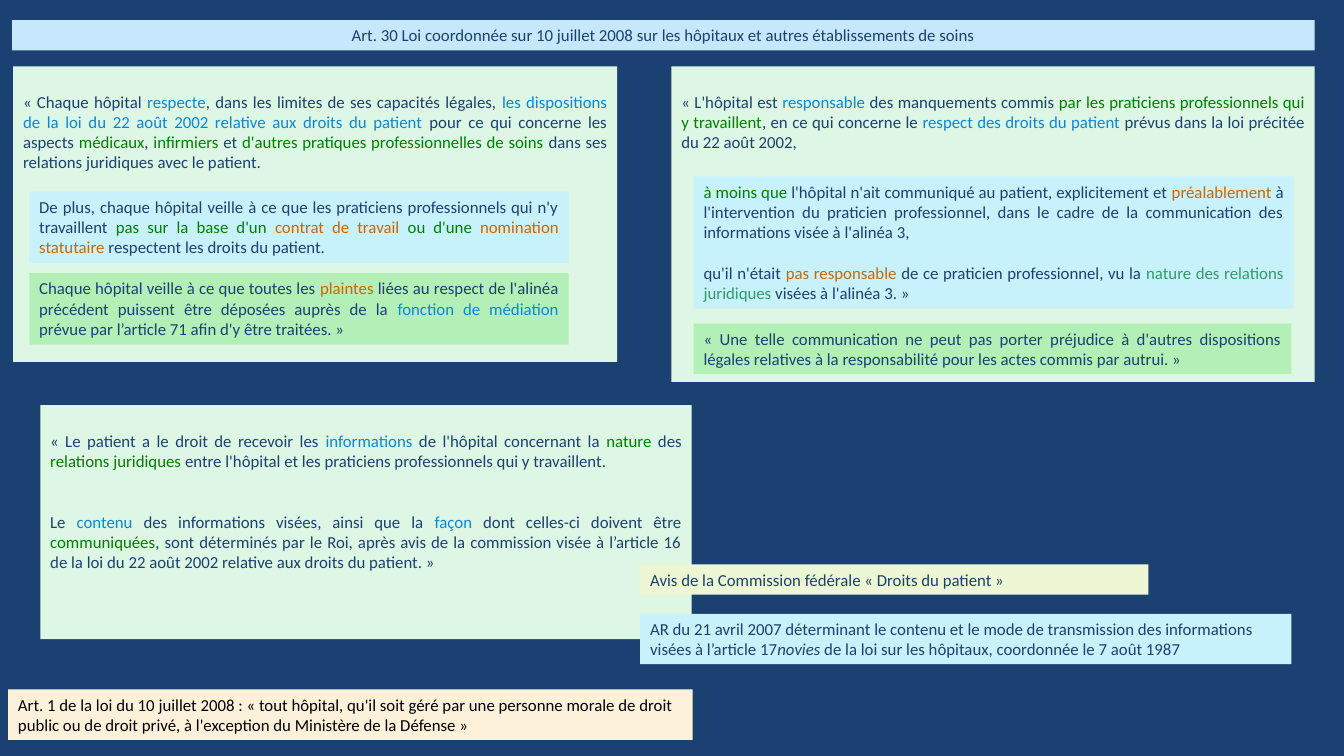
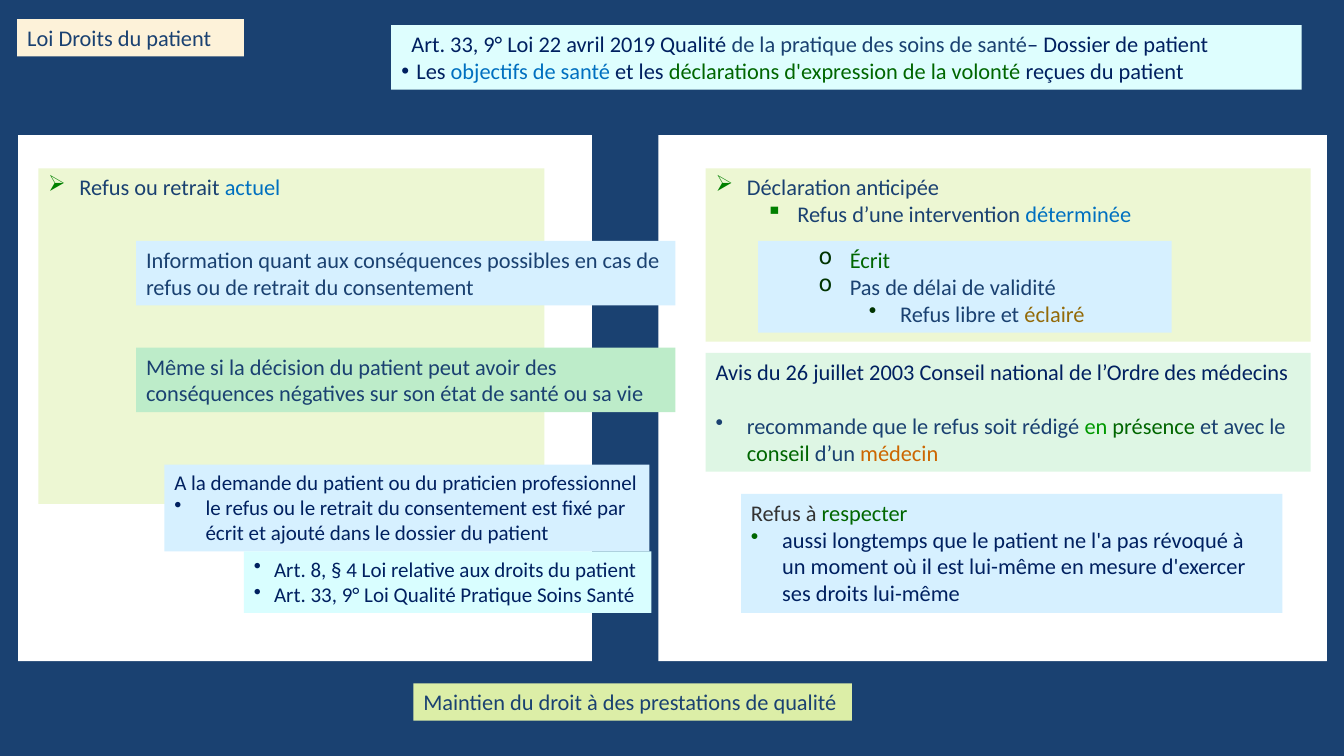
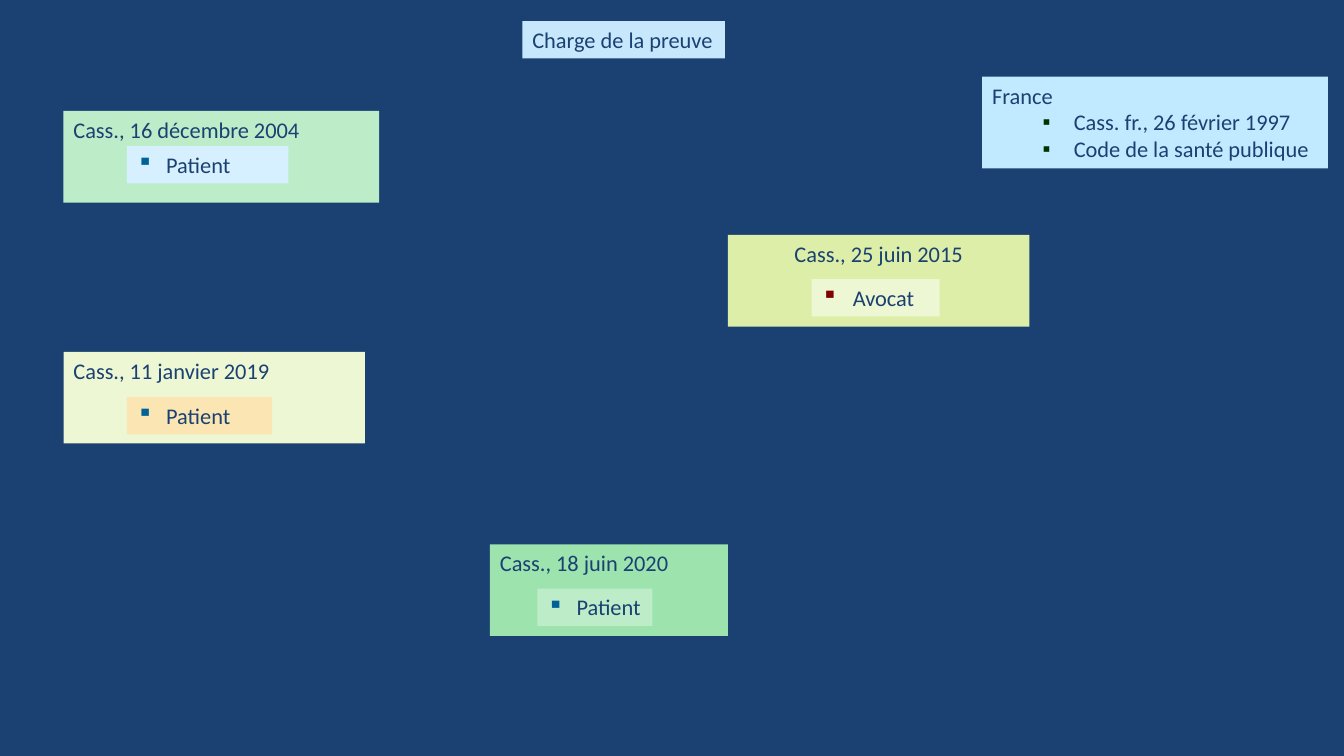
from dataclasses import dataclass
from lxml.etree import SubElement
from pptx import Presentation
from pptx.dml.color import RGBColor
from pptx.enum.shapes import MSO_SHAPE
from pptx.enum.text import MSO_ANCHOR, MSO_AUTO_SIZE, PP_ALIGN
from pptx.oxml.ns import qn
from pptx.util import Inches, Pt

INK = RGBColor(0x1A, 0x41, 0x71)
NAVY = RGBColor(0x00, 0x20, 0x60)
BLUE = RGBColor(0x0B, 0x87, 0xD6)
AZURE = RGBColor(0x00, 0x70, 0xC0)
TEAL = RGBColor(0x01, 0x62, 0x96)
GREEN = RGBColor(0x00, 0x80, 0x00)
DARK = RGBColor(0x00, 0x66, 0x00)
PINE = RGBColor(0x00, 0x33, 0x00)
FRESH = RGBColor(0x00, 0x99, 0x00)
SEA = RGBColor(0x33, 0x99, 0x66)
RUST = RGBColor(0xCC, 0x66, 0x00)
GOLD = RGBColor(0x93, 0x6A, 0x08)
RED = RGBColor(0x80, 0x00, 0x00)
GREY = RGBColor(0x33, 0x33, 0x33)
BLACK = RGBColor(0x00, 0x00, 0x00)
WHITE = RGBColor(0xFF, 0xFF, 0xFF)
SKY = RGBColor(0xC6, 0xE7, 0xFC)
AQUA = RGBColor(0xC7, 0xF2, 0xFB)
PALE = RGBColor(0xD6, 0xF0, 0xFF)
FROST = RGBColor(0xDE, 0xFE, 0xFE)
ICE = RGBColor(0xD9, 0xFE, 0xFF)
CLEAR = RGBColor(0xC1, 0xE9, 0xFF)
MINT = RGBColor(0xDE, 0xF6, 0xE4)
LEAF = RGBColor(0xB2, 0xF0, 0xB8)
SAGE = RGBColor(0xBD, 0xEC, 0xC9)
JADE = RGBColor(0x9D, 0xE3, 0xAE)
LIME = RGBColor(0xED, 0xF7, 0xD3)
MOSS = RGBColor(0xDC, 0xEE, 0xA7)
CREAM = RGBColor(0xFD, 0xF2, 0xD9)
PEACH = RGBColor(0xFB, 0xE6, 0xB3)

LEFT, MID, JUST = PP_ALIGN.LEFT, PP_ALIGN.CENTER, PP_ALIGN.JUSTIFY


@dataclass
class Par:
    runs: list
    mark: str = ""
    tint: RGBColor = None
    left: float = 0
    hang: float = 0
    gap: float = 0


def item(mark, tint, *runs, left=0.31, hang=0.31, gap=0):
    return Par(list(runs), mark, tint, left, hang, gap)


def plain(*runs, left=0, gap=0):
    return Par(list(runs), left=left, gap=gap)


class Deck:
    font = "Calibri"

    def __init__(self):
        self.prs = Presentation()
        self.prs.slide_width = Inches(13.33)
        self.prs.slide_height = Inches(7.5)
        back = self.prs.slide_master.background.fill
        back.solid()
        back.fore_color.rgb = INK
        self.slide = None
        self.size = 16

    def page(self, layout, size):
        self.slide = self.prs.slides.add_slide(self.prs.slide_layouts[layout])
        self.size = size

    def title(self, at, fill, text, align=LEFT, wrap=True):
        self.dress(self.slide.shapes.title, at, fill, [plain(text)], align=align, wrap=wrap)

    def body(self, at, fill, *pars, **look):
        self.dress(self.slide.placeholders[1], at, fill, pars, **look)

    def box(self, at, fill, *pars, **look):
        spot = [Inches(v) for v in at]
        shape = self.slide.shapes.add_shape(MSO_SHAPE.RECTANGLE, *spot)
        shape.shadow.inherit = False
        self.dress(shape, at, fill, pars, **look)

    def dress(self, shape, at, fill, pars, size=None, ink=INK, align=LEFT, top=0.05, wrap=True):
        shape.left, shape.top, shape.width, shape.height = [Inches(v) for v in at]
        shape.fill.solid()
        shape.fill.fore_color.rgb = fill
        shape.line.fill.background()
        frame = shape.text_frame
        frame.auto_size = MSO_AUTO_SIZE.NONE
        frame.word_wrap = wrap
        frame.vertical_anchor = MSO_ANCHOR.TOP
        frame.margin_left = frame.margin_right = Inches(0.1)
        frame.margin_top, frame.margin_bottom = Inches(top), Inches(0.05)
        for n, par in enumerate(pars):
            line = frame.add_paragraph() if n else frame.paragraphs[0]
            self.typeset(line, par, size or self.size, ink, align)

    def typeset(self, line, par, size, ink, align):
        line.alignment = align
        line.space_before = Pt(par.gap)
        line.space_after = Pt(0)
        for part in par.runs:
            text, tone = part if isinstance(part, tuple) else (part, ink)
            run = line.add_run()
            run.text = text
            run.font.name = self.font
            run.font.size = Pt(size)
            run.font.bold = False
            run.font.color.rgb = tone
        props = line._p.get_or_add_pPr()
        props.set("marL", str(Inches(par.left)))
        props.set("indent", str(-Inches(par.hang)))
        if par.mark:
            hue = SubElement(props, qn("a:buClr"))
            SubElement(hue, qn("a:srgbClr"), val=str(par.tint or ink))
            SubElement(props, qn("a:buChar"), char=par.mark)
        else:
            SubElement(props, qn("a:buNone"))


def care(deck):
    deck.page(5, 12)
    deck.title((0.12, 0.2, 12.92, 0.3), SKY,
               "Art. 30 Loi coordonnée sur 10 juillet 2008 sur les hôpitaux et autres établissements de soins",
               align=MID)
    deck.box((0.13, 0.66, 5.99, 2.93), MINT, plain(
        "« Chaque hôpital ", ("respecte", BLUE), ", dans les limites de ses capacités légales, ",
        ("les dispositions de la loi du 22 août 2002 relative aux droits du patient ", BLUE),
        "pour ce qui concerne les aspects ", ("médicaux", GREEN), ", ", ("infirmiers", GREEN), " et ",
        ("d'autres pratiques professionnelles de soins ", GREEN),
        "dans ses relations juridiques avec le patient."), align=JUST, top=0.25)
    deck.box((0.29, 1.9, 5.35, 0.71), AQUA, plain(
        "De plus, chaque hôpital veille à ce que les praticiens professionnels qui n'y travaillent ",
        ("pas sur la base d'un ", GREEN), ("contrat de travail ", RUST), ("ou d'une ", GREEN),
        ("nomination statutaire ", RUST), "respectent les droits du patient."), align=JUST)
    deck.box((0.29, 2.71, 5.35, 0.71), LEAF, plain(
        "Chaque hôpital veille à ce que toutes les ", ("plaintes", RUST),
        " liées au respect de l'alinéa précédent puissent être déposées auprès de la ",
        ("fonction de médiation ", BLUE), "prévue par l’article 71 afin d'y être traitées. »"), align=JUST)
    deck.box((6.66, 0.66, 6.38, 3.13), MINT, plain(
        "« L'hôpital est ", ("responsable", BLUE), " des manquements commis ",
        ("par les praticiens professionnels qui y travaillent", GREEN), ", en ce qui concerne le ",
        ("respect des droits du patient ", BLUE),
        "prévus dans la loi précitée du 22 août 2002,"), align=JUST, top=0.25)
    deck.box((6.88, 3.21, 5.93, 0.5), LEAF, plain(
        "« Une telle communication ne peut pas porter préjudice à d'autres dispositions légales "
        "relatives à la responsabilité pour les actes commis par autrui. »"), align=JUST)
    deck.box((6.88, 1.75, 5.95, 1.31), AQUA, plain(
        ("à moins que ", GREEN), "l'hôpital n'ait communiqué au patient, explicitement et ",
        ("préalablement", RUST),
        " à l'intervention du praticien professionnel, dans le cadre de la communication "
        "des informations visée à l'alinéa 3,"), plain(
        "qu'il n'était ", ("pas responsable ", RUST), "de ce praticien professionnel, vu la ",
        ("nature des relations juridiques", SEA), " visées à l'alinéa 3. »", gap=14.6), align=JUST)
    deck.box((0.4, 4.02, 6.46, 2.32), MINT, plain(
        "« Le patient a le droit de recevoir les ", ("informations", BLUE),
        " de l'hôpital concernant la ", ("nature", GREEN), " des ", ("relations juridiques ", GREEN),
        "entre l'hôpital et les praticiens professionnels qui y travaillent."), plain(
        "Le ", ("contenu", BLUE), " des informations visées, ainsi que la ", ("façon", BLUE),
        " dont celles-ci doivent être ", ("communiquées", GREEN),
        ", sont déterminés par le Roi, après avis de la commission visée à l’article 16 "
        "de la loi du 22 août 2002 relative aux droits du patient. »", gap=29.2), align=JUST, top=0.25)
    deck.box((6.35, 6.09, 6.46, 0.5), AQUA, plain(
        "AR du 21 avril 2007 déterminant le contenu et le mode de transmission des informations "
        "visées à l’article 17", "novies", " de la loi sur les hôpitaux, coordonnée le 7 août 1987"))
    decree = deck.slide.shapes[-1].text_frame.paragraphs[0]
    decree.runs[1].font.italic = True
    deck.box((6.35, 5.6, 5.04, 0.3), LIME, plain("Avis de la Commission fédérale « Droits du patient »"))
    deck.box((0.08, 6.84, 6.79, 0.5), CREAM, plain(
        "Art. 1 de la loi du 10 juillet 2008 : « tout hôpital, qu'il soit géré par une personne morale "
        "de droit public ou de droit privé, à l'exception du Ministère de la Défense »"), ink=BLACK)


def rights(deck):
    deck.page(1, 16)
    deck.title((0.17, 0.19, 2.25, 0.37), CREAM, "Loi Droits du patient")
    deck.body((3.88, 0.25, 9.03, 0.64), FROST, plain(
        "Art. 33, 9° Loi 22 avril 2019 Qualité ", ("de la pratique des soins de santé", INK),
        "– Dossier de patient", left=0.1), item(
        "•", None, "Les ", ("objectifs de santé ", AZURE), "et les ",
        ("déclarations d'expression de la volonté ", DARK), "reçues du patient",
        left=0.15, hang=0.15), ink=NAVY)
    deck.box((6.53, 1.34, 6.63, 5.22), WHITE)
    deck.box((0.18, 1.34, 5.69, 5.22), WHITE)
    deck.box((7, 1.67, 6, 1.72), LIME, item("➢", GREEN, "Déclaration anticipée"),
             item("▪", GREEN, "Refus d’une intervention ", ("déterminée", AZURE), left=0.81))
    deck.box((7.52, 2.39, 4.1, 0.91), PALE, item("o", PINE, ("Écrit", DARK), left=0.81),
             item("o", PINE, "Pas de délai de validité", left=0.81),
             item("•", PINE, "Refus libre et ", ("éclairé", GOLD), left=1.31))
    deck.box((7.35, 4.9, 5.37, 1.18), PALE, plain(("Refus à ", GREY), ("respecter", DARK)), item(
        "•", DARK, "aussi longtemps que le patient ne l'a pas révoqué à un moment où il est "
        "lui-même en mesure d'exercer ses droits lui-même"), ink=NAVY)
    deck.box((7, 3.5, 6, 1.18), MINT,
             plain(("Avis du 26 juillet 2003 Conseil national de l’Ordre des médecins", NAVY)),
             item("•", INK, "recommande que le refus soit rédigé ", ("en ", FRESH), ("présence ", DARK),
                  "et avec le ", ("conseil", DARK), " d’un ", ("médecin", RUST), gap=19.5))
    deck.box((4.1, 6.78, 4.35, 0.37), MOSS,
             plain("Maintien du droit à des prestations de qualité"), wrap=False)
    deck.box((0.38, 1.67, 5.02, 3.33), LIME,
             item("➢", GREEN, "Refus ou retrait ", ("actuel", AZURE)))
    deck.box((1.35, 3.45, 5.35, 0.64), SAGE, plain(
        "Même si la décision du patient peut avoir des conséquences négatives "
        "sur son état de santé ou sa vie"))
    deck.box((1.35, 2.39, 5.35, 0.64), PALE, plain(
        "Information quant aux conséquences possibles en cas de refus ou de retrait du consentement"))
    deck.box((1.63, 4.61, 4.81, 0.86), PALE,
             plain("A la demande du patient ou du praticien professionnel"),
             item("•", None, "le refus ou le retrait du consentement est fixé par écrit "
                  "et ajouté dans le dossier du patient"), size=15, ink=NAVY)
    laws = ("Art. 8, § 4 Loi relative aux droits du patient", "Art. 33, 9° Loi Qualité Pratique Soins Santé")
    deck.box((2.42, 5.47, 4.04, 0.61), ICE,
             *[item("•", None, law, left=0.2, hang=0.2) for law in laws], size=15, ink=NAVY)


def proof(deck):
    deck.page(1, 16)
    deck.title((5.18, 0.21, 2.01, 0.37), SKY, "Charge de la preuve", wrap=False)
    texts = ("Cass. fr., 26 février 1997", "Code de la santé publique")
    deck.body((9.74, 0.76, 3.43, 0.91), CLEAR, plain("France"),
              *[item("▪", PINE, text, left=0.81) for text in texts], wrap=False)
    cases = (
        ("Cass., 16 décembre 2004", 0.63, 1.1, 3.13, SAGE, LEFT, "Patient", 1.26, 1.45, 1.6, PALE, TEAL),
        ("Cass., 25 juin 2015", 7.22, 2.33, 2.99, MOSS, MID, "Avocat", 8.05, 2.77, 1.27, LIME, RED),
        ("Cass., 11 janvier 2019", 0.63, 3.49, 2.99, LIME, LEFT, "Patient", 1.26, 3.94, 1.44, PEACH, TEAL),
        ("Cass., 18 juin 2020", 4.86, 5.4, 2.36, JADE, LEFT, "Patient", 5.33, 5.84, 1.14, SAGE, TEAL),
    )
    for name, x, y, w, fill, align, who, left, top, wide, tone, tint in cases:
        deck.box((x, y, w, 0.91), fill, plain(name), align=align)
        inset = 0.31 if who == "Avocat" else 0.29
        deck.box((left, top, wide, 0.37), tone, item("▪", tint, who, left=inset, hang=inset), wrap=wide > 1.2)


def main():
    deck = Deck()
    for build in (care, rights, proof):
        build(deck)
    deck.prs.save("out.pptx")


if __name__ == "__main__":
    main()
